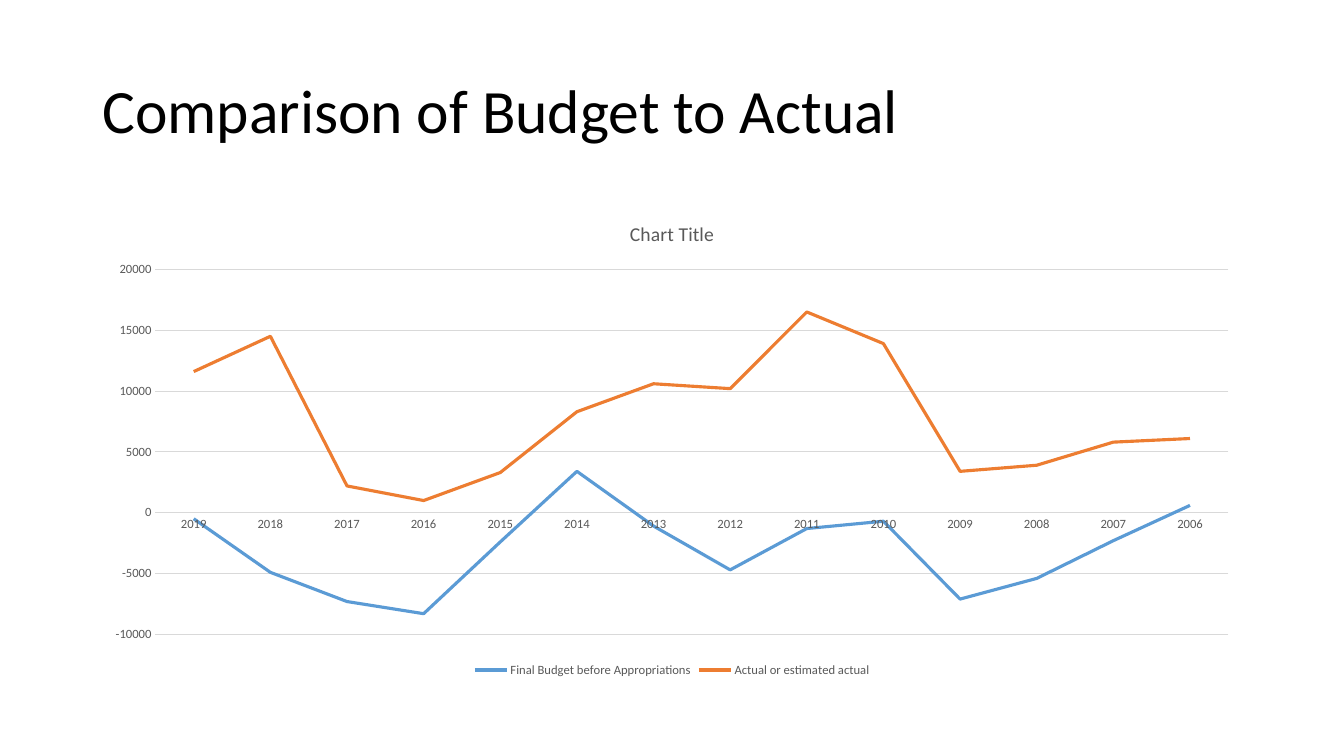
from dataclasses import dataclass

from pptx import Presentation
from pptx.chart.data import CategoryChartData
from pptx.dml.color import RGBColor
from pptx.enum.chart import XL_CHART_TYPE, XL_LEGEND_POSITION, XL_MARKER_STYLE, XL_TICK_MARK
from pptx.enum.text import MSO_ANCHOR
from pptx.util import Cm, Pt


@dataclass(frozen=True)
class Theme:
    font: str = "Calibri"
    ink: RGBColor = RGBColor(0x00, 0x00, 0x00)
    muted: RGBColor = RGBColor(0x59, 0x59, 0x59)
    grid: RGBColor = RGBColor(0xD9, 0xD9, 0xD9)
    budget: RGBColor = RGBColor(0x5B, 0x9B, 0xD5)
    actual: RGBColor = RGBColor(0xED, 0x7D, 0x31)
    headline_size: Pt = Pt(44)
    chart_title_size: Pt = Pt(14)
    chart_size: Pt = Pt(10)
    label_size: Pt = Pt(9)
    grid_width: Pt = Pt(0.75)
    series_width: Pt = Pt(2.25)


def style_font(font, size, color):
    for attribute, value in {"name": theme.font, "size": size, "bold": False}.items():
        setattr(font, attribute, value)
    font.color.rgb = color


def style_line(line, color, width):
    line.color.rgb = color
    line.width = width


theme = Theme()
left, content_width = Cm(2.33), Cm(29.21)
years = [str(year) for year in range(2019, 2005, -1)]
budget = [-500, -4900, -7300, -8300, -2400, 3400, -1100,
          -4700, -1300, -700, -7100, -5400, -2300, 600]
actual = [11600, 14500, 2200, 1000, 3300, 8300, 10600,
          10200, 16500, 13900, 3400, 3900, 5800, 6100]

presentation = Presentation()
presentation.slide_width, presentation.slide_height = Cm(33.87), Cm(19.05)
slide = presentation.slides.add_slide(presentation.slide_layouts[6])

# Headline
headline = slide.shapes.add_textbox(left, Cm(1.01), content_width, Cm(3.68)).text_frame
headline.word_wrap = True
headline.vertical_anchor = MSO_ANCHOR.MIDDLE
headline_line = headline.paragraphs[0]
headline_line.line_spacing = 0.9
headline_run = headline_line.add_run()
headline_run.text = "Comparison of Budget to Actual"
style_font(headline_run.font, theme.headline_size, theme.ink)

# Budget and actual by year
comparison = CategoryChartData(number_format="General")
comparison.categories = years
comparison.add_series("Final Budget before Appropriations", budget)
comparison.add_series("Actual or estimated actual", actual)
chart = slide.shapes.add_chart(
    XL_CHART_TYPE.LINE, left, Cm(5.08), content_width, Cm(12.09), comparison
).chart
style_font(chart.font, theme.chart_size, theme.ink)

chart.has_title = True
chart_title = chart.chart_title
chart_title.include_in_layout = False
chart_title.text_frame.text = "Chart Title"
style_font(chart_title.text_frame.paragraphs[0].runs[0].font,
           theme.chart_title_size, theme.muted)

chart.has_legend = True
chart.legend.position = XL_LEGEND_POSITION.BOTTOM
chart.legend.include_in_layout = False
style_font(chart.legend.font, theme.label_size, theme.muted)

# Axes
year_axis, amount_axis = chart.category_axis, chart.value_axis
for axis in (year_axis, amount_axis):
    axis.major_tick_mark = axis.minor_tick_mark = XL_TICK_MARK.NONE
    style_font(axis.tick_labels.font, theme.label_size, theme.muted)
style_line(year_axis.format.line, theme.grid, theme.grid_width)
amount_axis.format.line.fill.background()
amount_scale = {"minimum_scale": -10000, "maximum_scale": 20000, "major_unit": 5000}
for attribute, value in amount_scale.items():
    setattr(amount_axis, attribute, value)
style_line(amount_axis.major_gridlines.format.line, theme.grid, theme.grid_width)

# Series
plot = chart.plots[0]
plot.vary_by_categories = False
for series, color in zip(plot.series, (theme.budget, theme.actual)):
    series.smooth = False
    series.marker.style = XL_MARKER_STYLE.NONE
    style_line(series.format.line, color, theme.series_width)

presentation.save("out.pptx")
